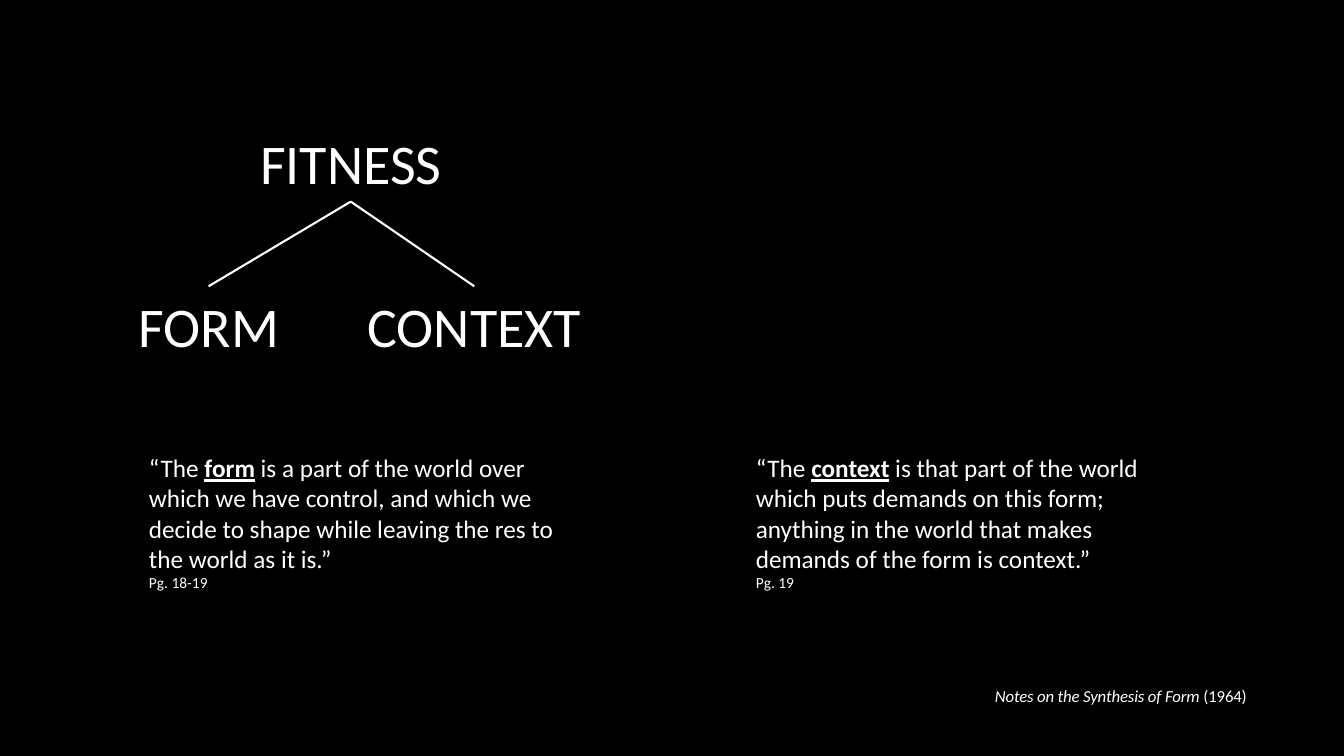
from dataclasses import dataclass

from lxml import etree
from pptx import Presentation
from pptx.dml.color import RGBColor
from pptx.enum.shapes import MSO_CONNECTOR
from pptx.enum.text import MSO_AUTO_SIZE, PP_ALIGN
from pptx.oxml.ns import qn
from pptx.util import Inches, Pt

STRAIGHT = MSO_CONNECTOR.STRAIGHT
GROW = MSO_AUTO_SIZE.SHAPE_TO_FIT_TEXT
CENTER, RIGHT = PP_ALIGN.CENTER, PP_ALIGN.RIGHT
TOP, BOTTOM = 0, 2
COLS, ROWS = 40, 30
BLANK = 6


@dataclass(frozen=True)
class Theme:
    font: str = "Calibri"
    ground: RGBColor = RGBColor(0, 0, 0)
    ink: RGBColor = RGBColor(255, 255, 255)
    node: float = 40
    quote: float = 18
    credit: float = 12
    page: float = 11
    line: float = 1.5


class Deck:
    def __init__(self, theme):
        self.theme = theme
        self.prs = Presentation()
        self.prs.slide_width, self.prs.slide_height = Inches(13.33), Inches(7.5)
        self.s = self.prs.slides.add_slide(self.prs.slide_layouts[BLANK])
        fill = self.s.background.fill
        fill.solid()
        fill.fore_color.rgb = theme.ground

    def box(self, col, row, cols, rows):
        cw, rh = self.prs.slide_width / COLS, self.prs.slide_height / ROWS
        sp = self.s.shapes.add_textbox(
            int(col * cw), int(row * rh), int(cols * cw), int(rows * rh))
        tf = sp.text_frame
        tf.word_wrap = True
        tf.auto_size = GROW
        return sp

    def run(self, p, text, size):
        r = p.add_run()
        r.text = text
        r.font.name = self.theme.font
        r.font.size = Pt(size)
        r.font.color.rgb = self.theme.ink
        return r

    def node(self, text, col, row, cols):
        sp = self.box(col, row, cols, 3.08)
        p = sp.text_frame.paragraphs[0]
        p.alignment = CENTER
        self.run(p, text, self.theme.node)
        return sp

    def branch(self, child, parent):
        cn = self.s.shapes.add_connector(STRAIGHT, 0, 0, 0, 0)
        cn.begin_connect(child, TOP)
        cn.end_connect(parent, BOTTOM)
        cn.line.color.rgb = self.theme.ink
        cn.line.width = Pt(self.theme.line)
        etree.SubElement(cn._element.spPr, qn("a:effectLst"))

    def quote(self, col, before, term, after, page):
        tf = self.box(col, 17.76, 13.08, 6).text_frame
        p = tf.paragraphs[0]
        self.run(p, before, self.theme.quote)
        r = self.run(p, term, self.theme.quote)
        r.font.bold = r.font.underline = True
        self.run(p, after, self.theme.quote)
        self.run(tf.add_paragraph(), page, self.theme.page)

    def credit(self, title, year):
        tf = self.box(27.9, 27.32, 9.21, 0.68).text_frame
        tf.margin_left = tf.margin_right = tf.margin_top = tf.margin_bottom = 0
        p = tf.paragraphs[0]
        p.alignment = RIGHT
        p.line_spacing = Pt(12.4)
        self.run(p, title, self.theme.credit).font.italic = True
        self.run(p, year, self.theme.credit)
        for r in p.runs:
            r._r.get_or_add_rPr().set("spc", "-10")


def main():
    deck = Deck(Theme())
    deck.credit("Notes on the Synthesis of Form ", "(1964)")
    fitness = deck.node("FITNESS", 3.45, 4.92, 13.98)
    for text, col, cols in (("FORM", 3.12, 6.18), ("CONTEXT", 10.08, 8.07)):
        deck.branch(deck.node(text, col, 11.36, cols), fitness)
    deck.quote(4.14, "“The ", "form",
               " is a part of the world over which we have control, and which we "
               "decide to shape while leaving the res to the world as it is.”",
               "Pg. 18-19")
    deck.quote(22.2, "“The ", "context",
               " is that part of the world which puts demands on this form; "
               "anything in the world that makes demands of the form is context.”",
               "Pg. 19")
    deck.prs.save("out.pptx")


if __name__ == "__main__":
    main()
